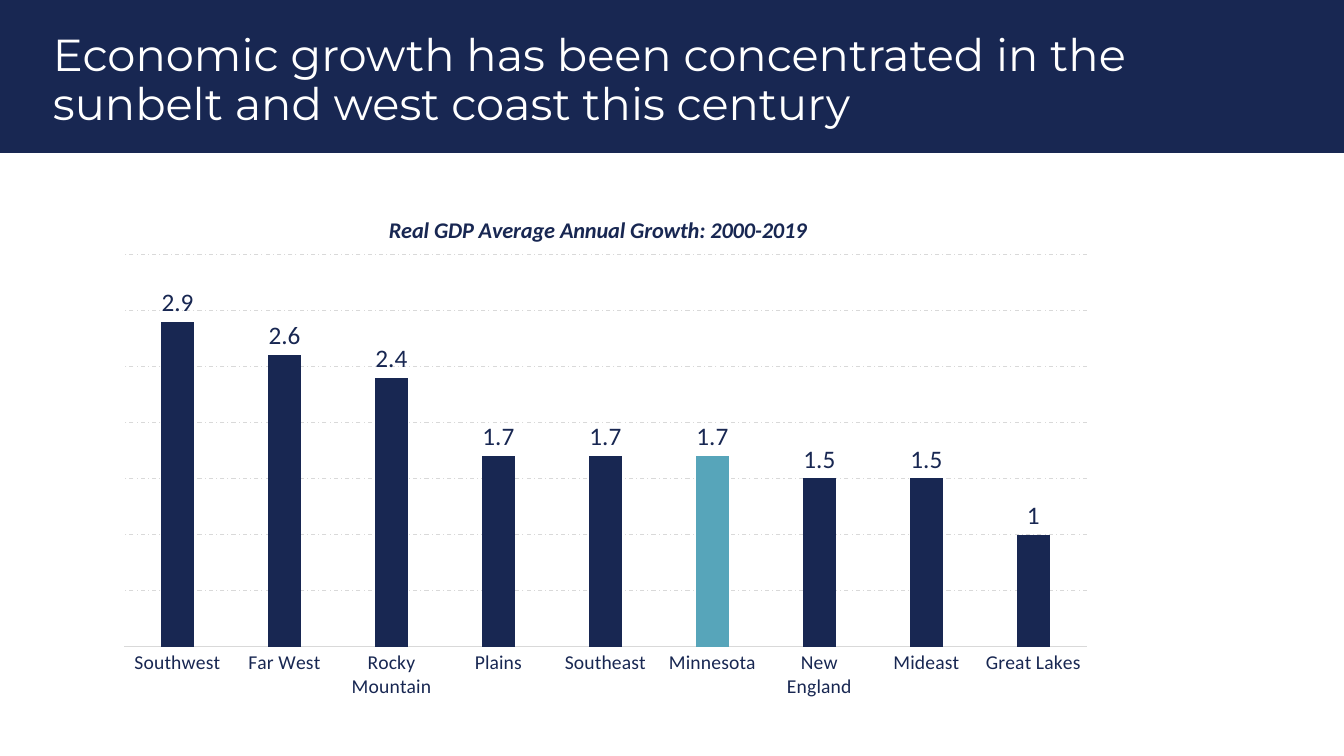
from lxml.etree import SubElement
from pptx import Presentation
from pptx.chart.data import CategoryChartData
from pptx.dml.color import RGBColor
from pptx.enum.chart import XL_CHART_TYPE, XL_LABEL_POSITION, XL_TICK_MARK
from pptx.enum.dml import MSO_LINE
from pptx.enum.shapes import MSO_SHAPE
from pptx.enum.text import MSO_ANCHOR, PP_ALIGN
from pptx.oxml.ns import qn
from pptx.util import Emu, Pt

NAVY, TEAL, GREY, WHITE = "182752", "57A5BA", "D9D9D9", "FFFFFF"
GROWTH = {
    "Southwest": 2.9,
    "Far West": 2.6,
    "Rocky Mountain": 2.4,
    "Plains": 1.7,
    "Southeast": 1.7,
    "Minnesota": 1.7,
    "New England": 1.5,
    "Mideast": 1.5,
    "Great Lakes": 1,
}


def px(length):
    return Emu(round(length * 914400 / 100.8))


def paint(color_format, color):
    color_format.rgb = RGBColor.from_string(color)


def fill_with(part, color):
    part.format.fill.solid()
    paint(part.format.fill.fore_color, color)


def set_font(font, size, color, name="Calibri"):
    font.size, font.name = Pt(size), name
    paint(font.color, color)


def set_line(line, color):
    line.width = Pt(0.75)
    paint(line.color, color)


def set_layout(parent, **values):
    layout = parent.find(qn("c:layout"))
    if layout is None:
        layout = SubElement(parent, qn("c:layout"))
    for child in list(layout):
        layout.remove(child)
    manual = SubElement(layout, qn("c:manualLayout"))
    for tag, value in values.items():
        SubElement(manual, qn(f"c:{tag}")).set("val", str(value))
    return layout


def add_header(page, left, top, width, height, text):
    band = page.shapes.add_shape(
        MSO_SHAPE.RECTANGLE, px(left), px(top), px(width), px(height)
    )
    band.shadow.inherit = False
    band.fill.solid()
    paint(band.fill.fore_color, NAVY)
    band.line.fill.background()

    box = page.shapes.add_textbox(
        px(left + 43), px(top + 24), px(width - 69), px(height - 38)
    )
    frame = box.text_frame
    frame.word_wrap = True
    frame.vertical_anchor = MSO_ANCHOR.MIDDLE
    para = frame.paragraphs[0]
    para.text = text
    para.alignment = PP_ALIGN.LEFT
    para.line_spacing = 0.9
    set_font(para.font, 32, WHITE, "Montserrat")


def add_growth_chart(page, left, top, width, height, title):
    data = CategoryChartData()
    data.categories = list(GROWTH)
    data.add_series("Series 1", list(GROWTH.values()))
    chart = page.shapes.add_chart(
        XL_CHART_TYPE.COLUMN_CLUSTERED, px(left), px(top), px(width), px(height), data
    ).chart
    set_font(chart.font, 14, NAVY)
    chart.has_legend = False

    chart.has_title = True
    para = chart.chart_title.text_frame.paragraphs[0]
    para.text = title
    set_font(para.font, 16, NAVY)
    para.font.bold = para.font.italic = True
    chart.chart_title.include_in_layout = False
    title_layout = set_layout(
        chart.chart_title._element, xMode="edge", yMode="edge", x=0.28, y=0.04
    )
    chart.chart_title._element.find(qn("c:tx")).addnext(title_layout)

    plot = chart.plots[0]
    plot.gap_width, plot.overlap = 219, -27
    plot.vary_by_categories = False
    plot_area = chart._chartSpace.chart.plotArea
    plot_layout = set_layout(
        plot_area, layoutTarget="inner", xMode="edge", yMode="edge",
        x=0.02, y=0.124, w=0.96, h=0.756,
    )
    plot_area.insert(0, plot_layout)

    series = plot.series[0]
    fill_with(series, NAVY)
    fill_with(series.points[list(GROWTH).index("Minnesota")], TEAL)
    labels = series.data_labels
    labels.show_value = True
    labels.position = XL_LABEL_POSITION.OUTSIDE_END
    set_font(labels.font, 18, NAVY)

    regions = chart.category_axis
    regions.major_tick_mark = XL_TICK_MARK.NONE
    set_font(regions.tick_labels.font, 14, NAVY)
    set_line(regions.format.line, GREY)

    scale = chart.value_axis
    scale.minimum_scale, scale.maximum_scale, scale.major_unit = 0, 3.5, 0.5
    scale.has_major_gridlines = True
    grid = scale.major_gridlines.format.line
    set_line(grid, GREY)
    grid.dash_style = MSO_LINE.DASH_DOT
    scale.visible = False


def main():
    deck = Presentation()
    deck.slide_width, deck.slide_height = px(1344), px(756)
    page = deck.slides.add_slide(deck.slide_layouts[6])
    add_header(
        page, 0, 0, 1344, 153,
        "Economic growth has been concentrated in the sunbelt and west coast this century",
    )
    add_growth_chart(
        page, 104, 190, 1003, 519, "Real GDP Average Annual Growth: 2000-2019"
    )
    deck.save("out.pptx")


if __name__ == "__main__":
    main()
